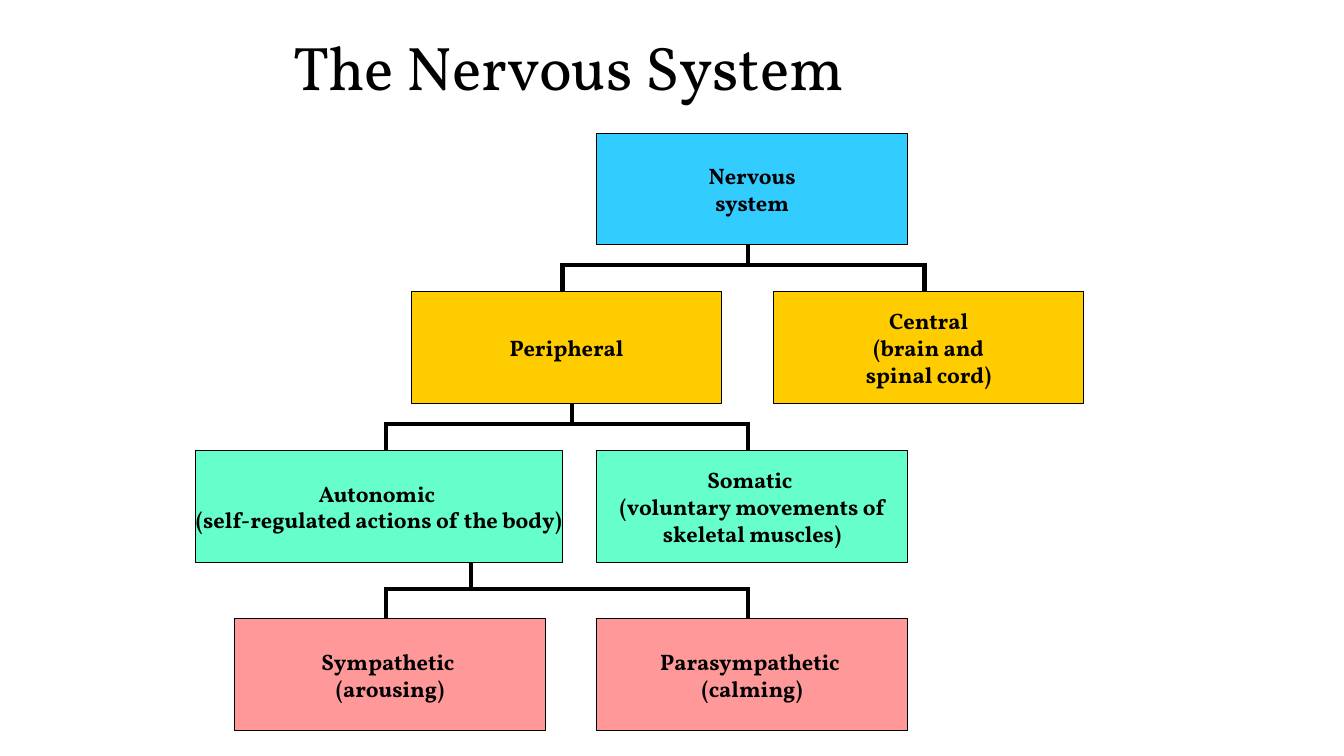
from dataclasses import dataclass

from lxml import etree
from pptx import Presentation
from pptx import util as u
from pptx.dml.color import RGBColor
from pptx.enum import shapes, text
from pptx.oxml.ns import qn

FONT = "Vollkorn"
BLACK = "000000"
BLUE, YELLOW, GREEN, PINK = "33CCFF", "FFCC00", "66FFCC", "FF9999"
BOX_W, BOX_H = 3.08, 1.11
ROW_TOPS = (1.32, 2.89, 4.47, 6.14)
STEM_RISE, DROP_FALL, OVERLAP = 0.29, 0.31, 0.02


@dataclass(frozen=True)
class Box:
    left: float
    row: int
    fill: str
    lines: tuple[str, ...]
    width: float = BOX_W


@dataclass(frozen=True)
class Branch:
    left: float
    right: float
    stem: float
    bar: float


BRANCHES = (
    Branch(5.58, 9.17, 7.42, 2.63),
    Branch(3.83, 7.42, 4.67, 5.84),
    Branch(3.83, 7.42, 5.67, 4.21),
)

BOXES = (
    Box(7.67, 1, YELLOW, ("Central", "(brain and", "spinal cord)")),
    Box(5.92, 0, BLUE, ("Nervous", "system")),
    Box(1.94, 2, GREEN, ("Autonomic ", "(self-regulated actions of the body)"), 3.64),
    Box(5.92, 2, GREEN, ("Somatic ", "(voluntary movements of", "skeletal muscles)")),
    Box(2.33, 3, PINK, ("Sympathetic ", "(arousing)")),
    Box(5.92, 3, PINK, ("Parasympathetic ", "(calming)")),
    Box(4.08, 1, YELLOW, ("Peripheral",)),
)


def rgb(value: str) -> RGBColor:
    return RGBColor.from_string(value)


def add_run(p, content: str, size: float, bold: bool) -> None:
    r = p.add_run()
    r.text = content
    r.font.name = FONT
    r.font.size = u.Pt(size)
    r.font.bold = bold
    r.font.color.rgb = rgb(BLACK)


def set_title(s, content: str) -> None:
    sp = s.shapes.title
    sp.left, sp.top = u.Inches(2.81), u.Inches(0.07)
    sp.width, sp.height = u.Inches(7.64), u.Inches(1.25)
    tf = sp.text_frame
    tf.vertical_anchor = text.MSO_ANCHOR.MIDDLE
    p = tf.paragraphs[0]
    p.alignment = text.PP_ALIGN.LEFT
    p.line_spacing = 0.9
    add_run(p, content, 44, False)


def add_line(s, x1: float, y1: float, x2: float, y2: float) -> None:
    line = s.shapes.add_connector(
        shapes.MSO_CONNECTOR.STRAIGHT,
        u.Inches(x1), u.Inches(y1), u.Inches(x2), u.Inches(y2),
    )
    line.line.color.rgb = rgb(BLACK)
    line.line.width = u.Pt(3)
    etree.SubElement(line._element.spPr, qn("a:effectLst"))


def add_branch(s, branch: Branch) -> None:
    add_line(s, branch.left, branch.bar, branch.right, branch.bar)
    add_line(s, branch.stem, branch.bar, branch.stem, branch.bar - STEM_RISE)
    for x in (branch.left, branch.right):
        add_line(s, x, branch.bar + DROP_FALL, x, branch.bar - OVERLAP)


def add_box(s, box: Box) -> None:
    sp = s.shapes.add_shape(
        shapes.MSO_SHAPE.RECTANGLE,
        u.Inches(box.left), u.Inches(ROW_TOPS[box.row]),
        u.Inches(box.width), u.Inches(BOX_H),
    )
    sp.shadow.inherit = False
    sp.fill.solid()
    sp.fill.fore_color.rgb = rgb(box.fill)
    sp.line.color.rgb = rgb(BLACK)
    sp.line.width = u.Pt(0.75)
    tf = sp.text_frame
    tf.word_wrap = False
    tf.vertical_anchor = text.MSO_ANCHOR.MIDDLE
    for i, content in enumerate(box.lines):
        p = tf.add_paragraph() if i else tf.paragraphs[0]
        p.alignment = text.PP_ALIGN.CENTER
        add_run(p, content, 16, True)


def main() -> None:
    prs = Presentation()
    prs.slide_width, prs.slide_height = u.Inches(13.33), u.Inches(7.5)
    s = prs.slides.add_slide(prs.slide_layouts[5])
    set_title(s, "The Nervous System")
    for branch in BRANCHES:
        add_branch(s, branch)
    for box in BOXES:
        add_box(s, box)
    prs.save("out.pptx")


if __name__ == "__main__":
    main()
